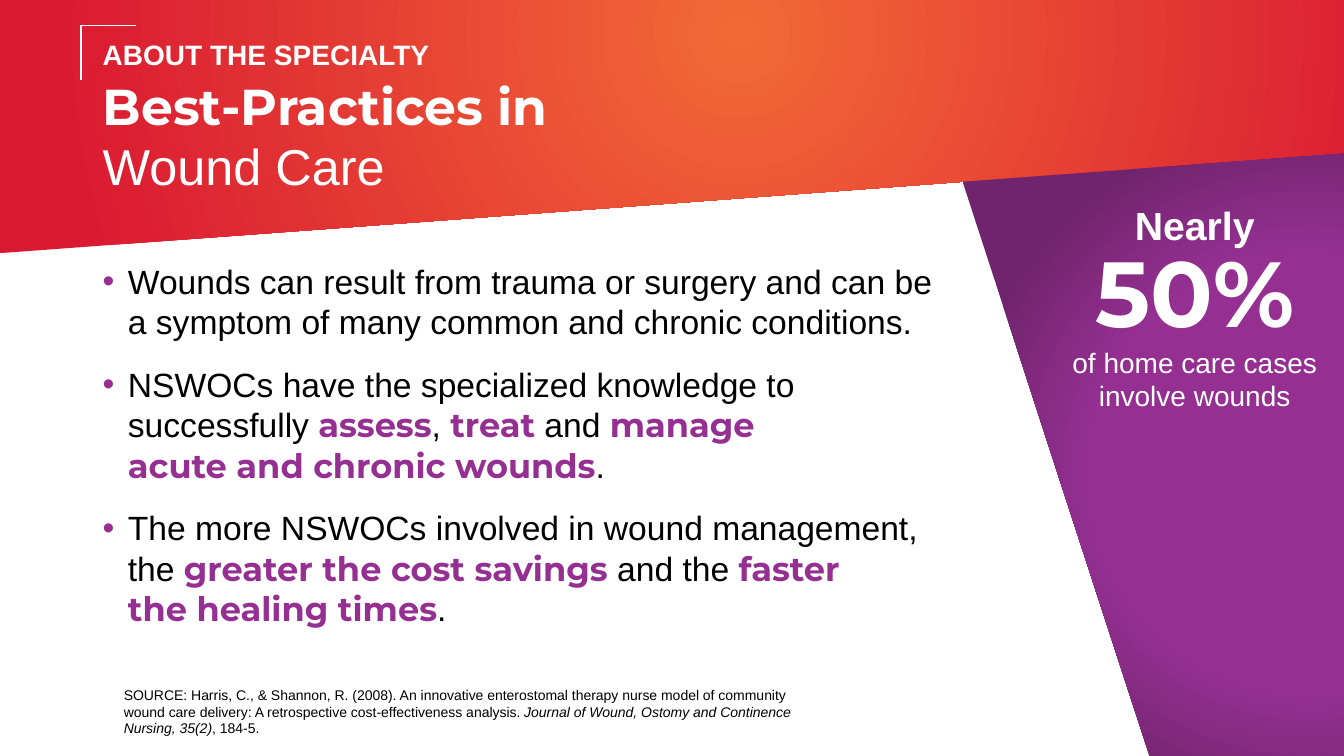
"""Build the wound care best-practices slide."""
import pptx
import pptx.dml.color
import pptx.enum.shapes
import pptx.enum.text
import pptx.oxml
import pptx.oxml.ns
import pptx.util
from lxml import etree

Cm = pptx.util.Cm
Pt = pptx.util.Pt
ALIGN = pptx.enum.text.PP_ALIGN
ANCHOR = pptx.enum.text.MSO_ANCHOR


class Deck:
    """Hold the style and the current slide."""

    colors = {"white": "FFFFFF", "black": "000000", "orange": "F26936",
              "red": "DA1A32", "purple": "953092", "plum": "70246D"}
    body_font = "Arial"
    accent_font = "Montserrat"

    def __init__(self, width, height):
        """Start a presentation with one blank slide."""
        self.prs = pptx.Presentation()
        self.prs.slide_width, self.prs.slide_height = Cm(width), Cm(height)
        self.s = self.prs.slides.add_slide(self.prs.slide_layouts[6])

    def rgb(self, name):
        """Return a named colour."""
        return pptx.dml.color.RGBColor.from_string(self.colors[name])

    def panel(self, points, stops, center):
        """Draw a polygon with a radial gradient."""
        corners = [(Cm(x), Cm(y)) for x, y in points]
        builder = self.s.shapes.build_freeform(*corners[0])
        builder.add_line_segments(corners[1:], close=True)
        sp = builder.convert_to_shape()
        sp.shadow.inherit = False
        sp.line.fill.background()
        sp.fill.background()
        x, y = center
        gs = "".join(f'<a:gs pos="{pos * 1000}"><a:srgbClr val="{self.colors[name]}"/></a:gs>'
                     for pos, name in stops)
        grad = pptx.oxml.parse_xml(
            f'<a:gradFill {pptx.oxml.ns.nsdecls("a")} rotWithShape="1"><a:gsLst>{gs}</a:gsLst>'
            f'<a:path path="circle"><a:fillToRect l="{x * 1000}" t="{y * 1000}" '
            f'r="{(100 - x) * 1000}" b="{(100 - y) * 1000}"/></a:path></a:gradFill>')
        pr = sp._element.spPr
        pr.replace(pr.find(pptx.oxml.ns.qn("a:noFill")), grad)

    def line(self, x1, y1, x2, y2):
        """Draw a thin white line."""
        c = self.s.shapes.add_connector(
            pptx.enum.shapes.MSO_CONNECTOR.STRAIGHT, Cm(x1), Cm(y1), Cm(x2), Cm(y2))
        c.line.color.rgb = self.rgb("white")
        c.line.width = Pt(1)
        etree.SubElement(c._element.spPr, pptx.oxml.ns.qn("a:effectLst"))

    def text_box(self, x, y, w, h, anchor=ANCHOR.TOP):
        """Add an empty wrapping text box and return its frame."""
        tf = self.s.shapes.add_textbox(Cm(x), Cm(y), Cm(w), Cm(h)).text_frame
        tf.word_wrap = True
        tf.vertical_anchor = anchor
        return tf

    def paragraph(self, tf, runs, size, color="black", before=0, after=0,
                  spacing=None, align=ALIGN.LEFT, bullet=False):
        """Add a paragraph from (text, style) runs."""
        first = tf.paragraphs[0]
        p = tf.add_paragraph() if first.runs else first
        p.alignment = align
        p.space_before, p.space_after = Pt(before), Pt(after)
        p.line_spacing = spacing
        if bullet:
            self.bullet(p)
        for text, style in runs:
            for i, part in enumerate(text.split("\n")):
                if i:
                    p.add_line_break()
                if part:
                    self.run(p, part, style, size, color)

    def run(self, p, text, style, size, color):
        """Add one styled run."""
        r = p.add_run()
        r.text = text
        r.font.size = Pt(size)
        r.font.name = self.accent_font if style in ("accent", "key") else self.body_font
        r.font.bold = style in ("bold", "accent", "key")
        r.font.italic = style == "italic"
        r.font.color.rgb = self.rgb("purple" if style == "key" else color)

    def bullet(self, p):
        """Give a paragraph a purple hanging bullet."""
        pr = p._p.get_or_add_pPr()
        indent = Cm(0.635)
        pr.set("marL", str(indent))
        pr.set("indent", str(-indent))
        color = etree.SubElement(pr, pptx.oxml.ns.qn("a:buClr"))
        etree.SubElement(color, pptx.oxml.ns.qn("a:srgbClr"), val=self.colors["purple"])
        etree.SubElement(pr, pptx.oxml.ns.qn("a:buFont"), typeface=self.body_font)
        etree.SubElement(pr, pptx.oxml.ns.qn("a:buChar"), char="•")


def main():
    """Compose and save the slide."""
    width, height = 33.87, 19.05
    deck = Deck(width, height)
    deck.panel([(0, 0), (width, 0), (width, 3.87), (0, 6.38)],
               [(0, "orange"), (100, "red")], (55, 13))
    deck.panel([(24.26, 4.58), (width, 3.87), (width, height), (28.97, height)],
               [(61, "purple"), (100, "plum")], (91, 53))

    title = deck.text_box(2.34, 0.66, 29.21, 4.55, ANCHOR.MIDDLE)
    deck.paragraph(title, [("ABOUT THE SPECIALTY", "bold")], 20, "white", after=3)
    deck.paragraph(title, [("Best-Practices in\n", "accent"), ("Wound Care", "plain")],
                   36, "white")

    body = deck.text_box(2.34, 6.45, 23.01, 10.24)
    points = [
        [("Wounds can result from trauma or surgery and can be\n"
          "a symptom of many common and chronic conditions.", "plain")],
        [("NSWOCs have the specialized knowledge to\nsuccessfully ", "plain"),
         ("assess", "key"), (", ", "plain"), ("treat", "key"), (" and ", "plain"),
         ("manage\nacute and chronic wounds", "key"), (".", "plain")],
        [("The more NSWOCs involved in wound management,\nthe ", "plain"),
         ("greater the cost savings ", "key"), ("and the ", "plain"),
         ("faster\nthe healing times", "key"), (".", "plain")],
    ]
    for runs in points:
        deck.paragraph(body, runs, 24, before=10, after=6, spacing=Pt(28.8), bullet=True)

    source = deck.text_box(2.87, 17.17, 18.19, 1.12)
    deck.paragraph(source, [
        ("SOURCE: Harris, C., & Shannon, R. (2008). An innovative enterostomal therapy nurse "
         "model of community wound care delivery: A retrospective cost-effectiveness "
         "analysis. ", "plain"),
        ("Journal of Wound, Ostomy and Continence Nursing, 35(2)", "italic"),
        (", 184-5.", "plain")], 10, before=3, after=3)

    stat = deck.text_box(26.44, 5.18, 7.34, 5.38)
    for text, style, size, before, spacing in [
            ("Nearly", "bold", 28, 6, 0.8),
            ("50%", "accent", 66, 6, 0.8),
            ("of home care cases involve wounds", "plain", 20, 0, 1.0)]:
        deck.paragraph(stat, [(text, style)], size, "white", before=before,
                       spacing=spacing, align=ALIGN.CENTER)

    deck.line(3.43, 0.64, 2.04, 0.64)
    deck.line(2.04, 0.64, 2.04, 2.01)
    deck.prs.save("out.pptx")


if __name__ == "__main__":
    main()
